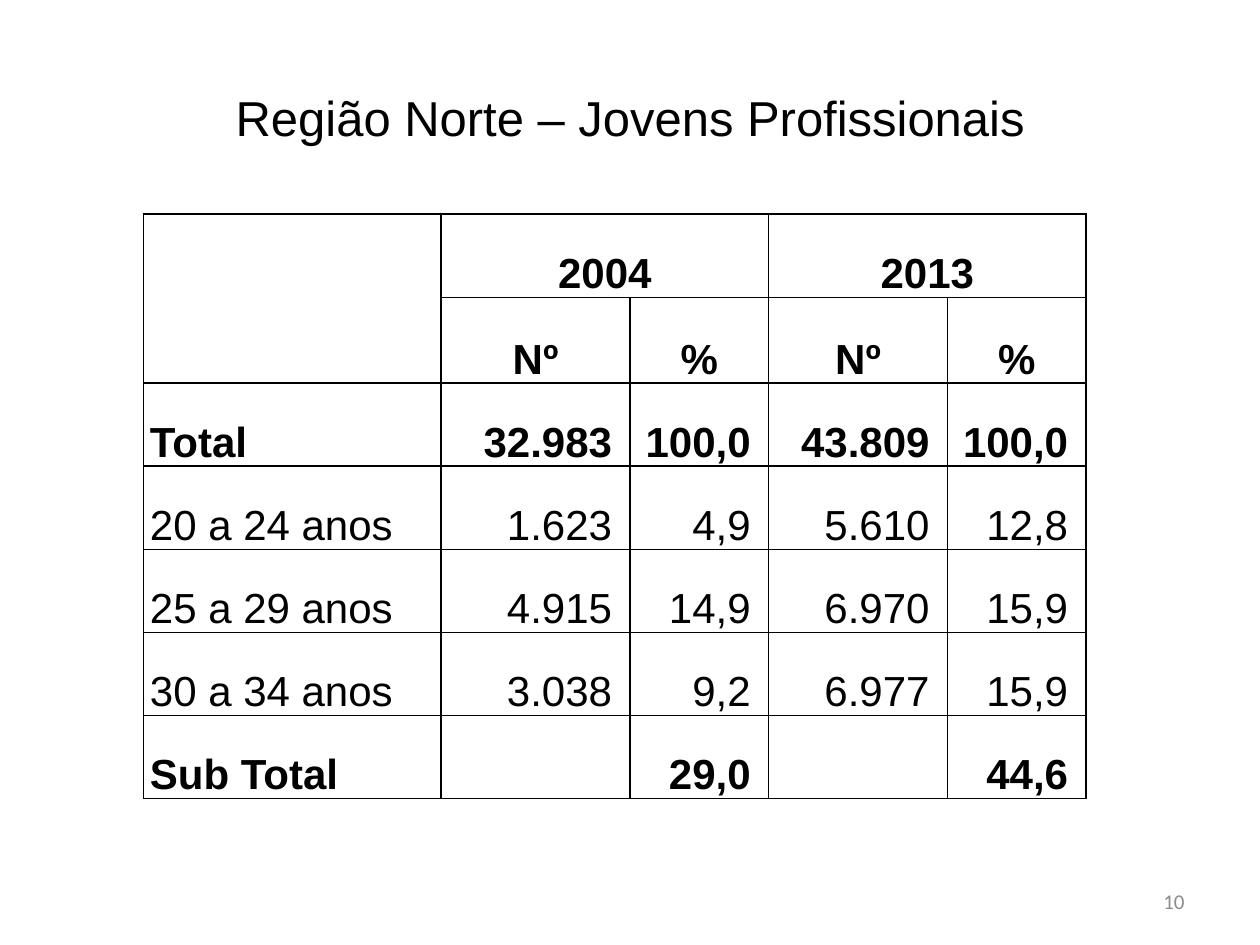
from lxml import etree
from pptx import Presentation
from pptx import util as u
from pptx.dml import color
from pptx.enum import text
from pptx.oxml import ns

deck = Presentation()
deck.slide_width, deck.slide_height = u.Inches(10), u.Inches(7.5)
W, H = deck.slide_width, deck.slide_height
slide = deck.slides.add_slide(deck.slide_layouts[5])
LEFT, CENTER, RIGHT = text.PP_ALIGN.LEFT, text.PP_ALIGN.CENTER, text.PP_ALIGN.RIGHT


def write(paragraph, words, align, size, ink="000000", face="Arial", bold=False):
    paragraph.alignment = align
    run = paragraph.add_run()
    run.text = words
    for name, value in {"size": u.Pt(size), "name": face, "bold": bold}.items():
        setattr(run.font, name, value)
    run.font.color.rgb = color.RGBColor.from_string(ink)


def border(cell, ink="000000"):
    props = cell._tc.get_or_add_tcPr()
    for place, side in enumerate(("lnL", "lnR", "lnT", "lnB")):
        line = etree.Element(ns.qn(f"a:{side}"), w=str(u.Pt(1)))
        fill = etree.SubElement(line, ns.qn("a:solidFill"))
        etree.SubElement(fill, ns.qn("a:srgbClr"), val=ink)
        props.insert(place, line)


heading = slide.shapes.title
heading_place = {"left": 0.05 * W, "top": 0.04 * H, "width": 0.9 * W, "height": H / 6}
for name, value in heading_place.items():
    setattr(heading, name, int(value))
heading.text_frame.vertical_anchor = text.MSO_ANCHOR.MIDDLE
write(heading.text_frame.paragraphs[0], "Região Norte – Jovens Profissionais", CENTER, 28)

age_groups = [
    ["", "2004", "", "2013", ""],
    ["", "Nº", "%", "Nº", "%"],
    ["Total", "32.983 ", "100,0 ", "43.809 ", "100,0 "],
    ["20 a 24 anos", "1.623 ", "4,9 ", "5.610 ", "12,8 "],
    ["25 a 29 anos", "4.915 ", "14,9 ", "6.970 ", "15,9 "],
    ["30 a 34 anos", "3.038 ", "9,2 ", "6.977 ", "15,9 "],
    ["Sub Total", "", "29,0 ", "", "44,6 "],
]
column_widths = [2.36, 1.5, 1.1, 1.42, 1.1]
row_heights = [0.66, 0.68] + [0.66] * 5
bold_rows = {0, 1, 2, 6}

professionals = slide.shapes.add_table(
    len(row_heights), len(column_widths), u.Inches(1.14), u.Inches(1.7),
    u.Inches(sum(column_widths)), u.Inches(sum(row_heights))).table
professionals.first_row = professionals.horz_banding = False
for column, width in zip(professionals.columns, column_widths):
    column.width = u.Inches(width)
for row, height in zip(professionals.rows, row_heights):
    row.height = u.Inches(height)

cell_format = {
    "margin_left": u.Inches(0.05), "margin_right": u.Inches(0.05),
    "margin_top": 0, "margin_bottom": 0,
    "vertical_anchor": text.MSO_ANCHOR.BOTTOM,
}
for r, entries in enumerate(age_groups):
    for c, entry in enumerate(entries):
        cell = professionals.cell(r, c)
        for name, value in cell_format.items():
            setattr(cell, name, value)
        cell.fill.background()
        border(cell)
        if entry:
            paragraph = cell.text_frame.paragraphs[0]
            paragraph.line_spacing = 1.07
            align = CENTER if r < 2 else RIGHT if c else LEFT
            write(paragraph, entry, align, 24, bold=r in bold_rows)

for first, last in [((0, 0), (1, 0)), ((0, 1), (0, 2)), ((0, 3), (0, 4))]:
    professionals.cell(*first).merge(professionals.cell(*last))

page_number = slide.shapes.add_textbox(
    u.Inches(7.17), u.Inches(6.95), u.Inches(2.33), u.Inches(0.4)).text_frame
page_number.word_wrap = True
page_number.vertical_anchor = text.MSO_ANCHOR.MIDDLE
write(page_number.paragraphs[0], "10", RIGHT, 12, "8C8C8C", "Calibri")

deck.save("out.pptx")
